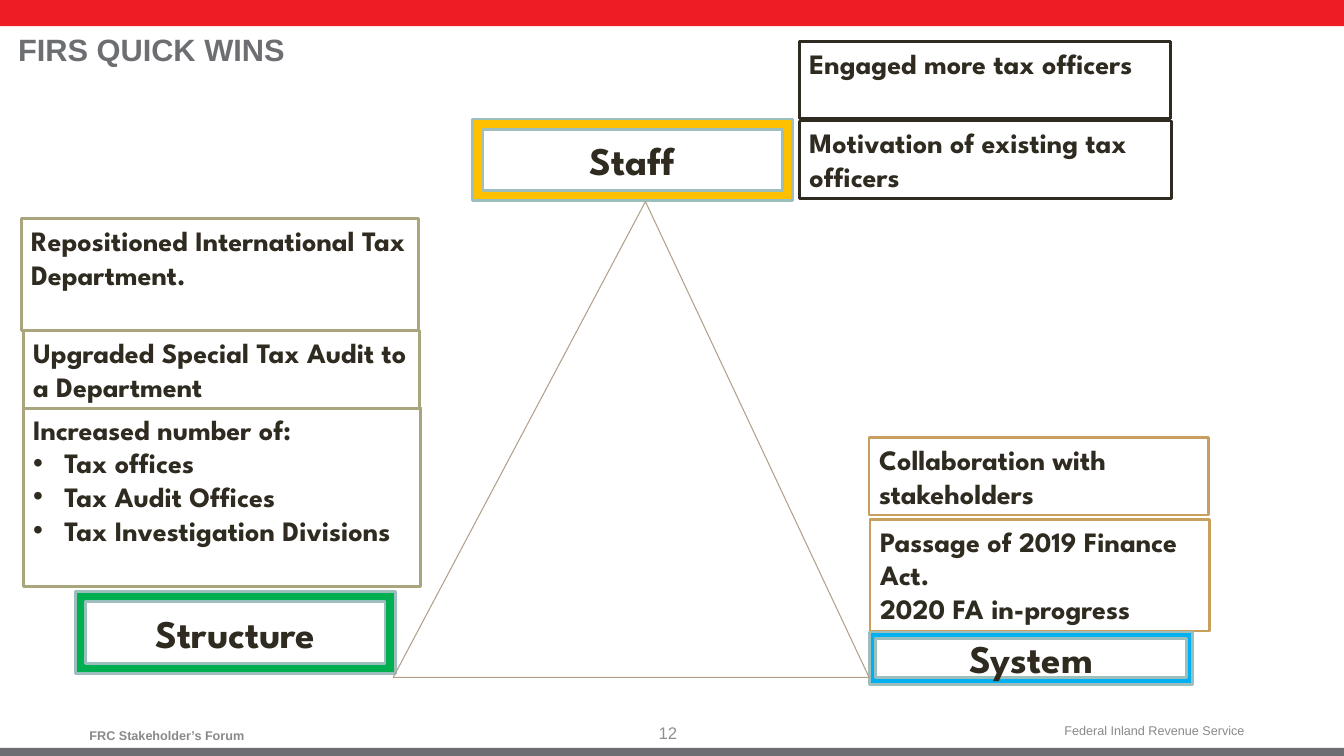
from lxml import etree
from pptx import Presentation
from pptx import util as u
from pptx.dml.color import RGBColor
from pptx.enum import shapes, text
from pptx.oxml.ns import qn

COLOURS = {
    "red": "EE1D23", "grey": "6D6E72", "footer": "898989", "number": "8F8F8D",
    "white": "FFFFFF", "ink": "2F2B20", "olive": "A9A57C", "ochre": "C89F5D",
    "frame": "9CBEBD", "triangle": "B1A089",
    "green": "00B050", "blue": "00B0F0", "amber": "FFC000",
}
HEADING_FONT = "League Spartan"
BODY_FONT = "Arial"
BULLET_INDENT = 0.31

CARDS = [
    ("olive", 0.21, 2.17, 3.94, 1.11, ["Repositioned International Tax Department."], []),
    ("olive", 0.23, 4.04, 3.94, 1.78, ["Increased number of:"],
     ["Tax offices", "Tax Audit Offices", "Tax Investigation Divisions"]),
    ("olive", 0.23, 3.28, 3.93, 0.77, ["Upgraded Special Tax Audit to a Department"], []),
    ("ink", 7.93, 1.2, 3.69, 0.77, ["Motivation of existing tax officers"], []),
    ("ink", 7.93, 0.41, 3.68, 0.77, ["Engaged more tax officers"], []),
    ("ochre", 8.62, 4.34, 3.37, 0.77, ["Collaboration with stakeholders"], []),
    ("ochre", 8.63, 5.15, 3.37, 1.11, ["Passage of 2019 Finance Act.", "2020 FA in-progress"], []),
]
PILLARS = [
    ("Structure", "green", 0.75, 5.87, 3.17, 0.81),
    ("System", "blue", 8.62, 6.27, 3.21, 0.52),
    ("Staff", "amber", 4.69, 1.18, 3.17, 0.81),
]
FOOTERS = [
    ("Federal Inland Revenue Service", 10.55, 7.17, 1.8, 0.15, 9, "footer", False),
    ("FRC Stakeholder’s Forum", 0.88, 7.22, 1.55, 0.15, 9, "footer", True),
    ("12", 5.07, 7.14, 3.11, 0.25, 12, "number", False),
]


def colour(name):
    """Return the named colour."""
    return RGBColor.from_string(COLOURS[name])


def box(left, top, width, height):
    """Return a position and size given in inches."""
    return [u.Inches(value) for value in (left, top, width, height)]


def set_font(paragraph, name, size, colour_name, bold):
    """Format a whole paragraph."""
    font = paragraph.font
    font.name, font.size, font.bold = name, u.Pt(size), bold
    font.color.rgb = colour(colour_name)


def clear_margins(frame):
    """Remove the insets of a text frame."""
    frame.margin_left = frame.margin_right = frame.margin_top = frame.margin_bottom = 0


def add_bullet(paragraph):
    """Give a paragraph a hanging round bullet."""
    properties = paragraph._p.get_or_add_pPr()
    properties.set("marL", str(u.Inches(BULLET_INDENT)))
    properties.set("indent", str(-u.Inches(BULLET_INDENT)))
    etree.SubElement(properties, qn("a:buFont"), typeface="Arial")
    etree.SubElement(properties, qn("a:buChar"), char="•")


def add_preset(slide, preset, place, fill=None, line=None, line_width=2):
    """Add a flat preset shape with an optional fill and outline."""
    shape = slide.shapes.add_shape(preset, *box(*place))
    shape.shadow.inherit = False
    if fill:
        shape.fill.solid()
        shape.fill.fore_color.rgb = colour(fill)
    else:
        shape.fill.background()
    if line:
        shape.line.color.rgb = colour(line)
        shape.line.width = u.Pt(line_width)
    else:
        shape.line.fill.background()
    return shape


def add_title(slide, wording):
    """Place and format the title."""
    title = slide.shapes.title
    title.left, title.top, title.width, title.height = box(0.18, 0.3, 12.82, 0.4)
    frame = title.text_frame
    frame.text = wording
    frame.word_wrap = True
    frame.auto_size = text.MSO_AUTO_SIZE.NONE
    frame.vertical_anchor = text.MSO_ANCHOR.TOP
    clear_margins(frame)
    paragraph = frame.paragraphs[0]
    paragraph.alignment = text.PP_ALIGN.LEFT
    set_font(paragraph, BODY_FONT, 22, "grey", True)


def add_footer(slide, wording, left, top, width, height, size, colour_name, bold):
    """Add one centred line of footer text."""
    frame = slide.shapes.add_textbox(*box(left, top, width, height)).text_frame
    frame.text = wording
    frame.word_wrap = False
    frame.vertical_anchor = text.MSO_ANCHOR.MIDDLE
    clear_margins(frame)
    paragraph = frame.paragraphs[0]
    paragraph.alignment = text.PP_ALIGN.CENTER
    set_font(paragraph, BODY_FONT, size, colour_name, bold)


def add_card(slide, line, left, top, width, height, sentences, bullets):
    """Add an outlined card with sentences and then bullets."""
    place = (left, top, width, height)
    card = add_preset(slide, shapes.MSO_SHAPE.RECTANGLE, place, "white", line)
    frame = card.text_frame
    frame.word_wrap = True
    frame.vertical_anchor = text.MSO_ANCHOR.TOP
    frame.text = "\n".join(sentences + bullets)
    for index, paragraph in enumerate(frame.paragraphs):
        paragraph.alignment = text.PP_ALIGN.LEFT
        if index >= len(sentences):
            add_bullet(paragraph)
        set_font(paragraph, HEADING_FONT, 20, "ink", True)


def add_pillar(slide, wording, fill, *place):
    """Add a coloured frame with a centred label."""
    pillar = add_preset(slide, shapes.MSO_SHAPE.FRAME, place, fill, "frame")
    frame = pillar.text_frame
    frame.text = wording
    frame.word_wrap = True
    frame.vertical_anchor = text.MSO_ANCHOR.MIDDLE
    paragraph = frame.paragraphs[0]
    paragraph.alignment = text.PP_ALIGN.CENTER
    set_font(paragraph, HEADING_FONT, 28, "ink", True)


def main():
    """Build the slide and save it."""
    presentation = Presentation()
    presentation.slide_width, presentation.slide_height = u.Inches(13.33), u.Inches(7.5)
    slide = presentation.slides.add_slide(presentation.slide_layouts[5])
    add_preset(slide, shapes.MSO_SHAPE.RECTANGLE, (0, 0, 13.33, 0.26), "red")
    add_preset(slide, shapes.MSO_SHAPE.RECTANGLE, (0, 7.42, 13.33, 0.08), "grey")
    add_title(slide, "FIRS QUICK WINS")
    for footer in FOOTERS:
        add_footer(slide, *footer)
    for card in CARDS:
        add_card(slide, *card)
    for pillar in PILLARS:
        add_pillar(slide, *pillar)
    triangle = add_preset(slide, shapes.MSO_SHAPE.ISOSCELES_TRIANGLE,
                          (3.9, 2, 4.72, 4.72), line="triangle", line_width=0.75)
    triangle.adjustments[0] = 0.53
    presentation.save("out.pptx")


if __name__ == "__main__":
    main()
